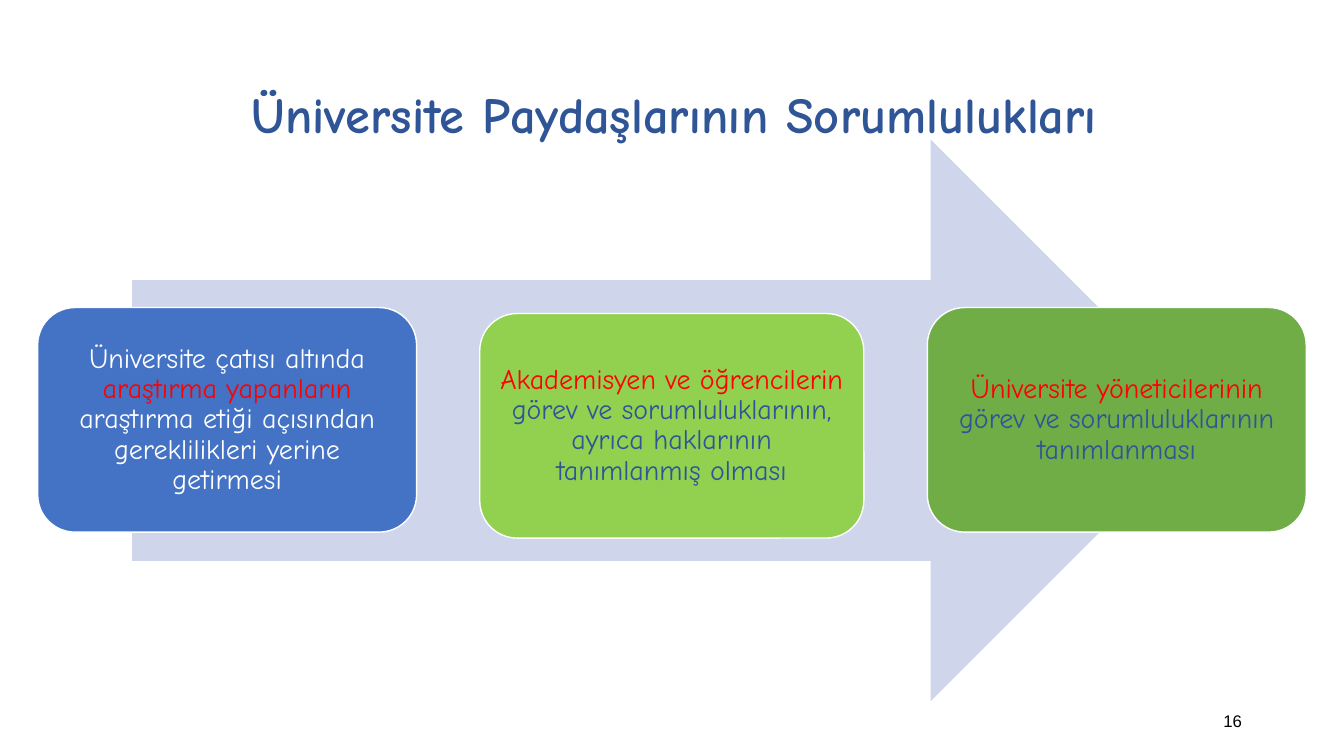
"""Build the slide on the responsibilities of university stakeholders."""
import pptx
import pptx.util
import pptx.dml.color
import pptx.enum.shapes
import pptx.enum.text

Cm = pptx.util.Cm
Pt = pptx.util.Pt
RGBColor = pptx.dml.color.RGBColor
MSO_SHAPE = pptx.enum.shapes.MSO_SHAPE
PP_ALIGN = pptx.enum.text.PP_ALIGN
MSO_ANCHOR = pptx.enum.text.MSO_ANCHOR

NAVY = RGBColor(0x2F, 0x55, 0x97)
RED = RGBColor(0xFF, 0x00, 0x00)
WHITE = RGBColor(0xFF, 0xFF, 0xFF)
BLACK = RGBColor(0x00, 0x00, 0x00)
PALE = RGBColor(0xCF, 0xD5, 0xEA)
BLUE = RGBColor(0x44, 0x72, 0xC4)
LIME = RGBColor(0x92, 0xD0, 0x50)
GREEN = RGBColor(0x70, 0xAD, 0x47)


def write(tf, runs, align=PP_ALIGN.CENTER, spacing=0.9):
    """Fill the frame with one paragraph of (text, font values) runs."""
    for name, value in {"word_wrap": True, "vertical_anchor": MSO_ANCHOR.MIDDLE,
                        "auto_size": pptx.enum.text.MSO_AUTO_SIZE.NONE}.items():
        setattr(tf, name, value)
    p = tf.paragraphs[0]
    p.alignment = align
    p.line_spacing = spacing
    for text, font, size, bold, color in runs:
        r = p.add_run()
        r.text = text
        for name, value in {"name": font, "size": Pt(size), "bold": bold}.items():
            setattr(r.font, name, value)
        r.font.color.rgb = color


def add_shape(kind, left, top, width, height, fill):
    """Add a flat filled shape without outline; lengths in centimetres."""
    sp = s.shapes.add_shape(kind, Cm(left), Cm(top), Cm(width), Cm(height))
    sp.shadow.inherit = False
    sp.fill.solid()
    sp.fill.fore_color.rgb = fill
    sp.line.fill.background()
    return sp


prs = pptx.Presentation()
prs.slide_width = Cm(33.87)
prs.slide_height = Cm(19.05)
s = prs.slides.add_slide(prs.slide_layouts[5])

title = s.shapes.title
for name, value in {"left": 2.34, "top": 1.02, "width": 29.21, "height": 3.68}.items():
    setattr(title, name, Cm(value))
write(title.text_frame, [
    (" ", "Comic Neue", 44, True, NAVY),
    ("Üniversite Paydaşlarının Sorumlulukları ", "Comic Neue", 36, True, NAVY),
])

number = s.shapes.add_textbox(Cm(23.93), Cm(17.65), Cm(7.62), Cm(1.02))
write(number.text_frame, [("16", "Arial", 12, False, BLACK)], PP_ALIGN.RIGHT, 1.0)

add_shape(MSO_SHAPE.RIGHT_ARROW, 3.33, 3.52, 27.2, 14.15, PALE)

boxes = [
    (0.95, 7.75, 9.55, BLUE, [("Üniversite çatısı altında ", WHITE),
                              ("araştırma yapanların ", RED),
                              ("araştırma etiği açısından gereklilikleri yerine getirmesi", WHITE)]),
    (12.09, 7.9, 9.68, LIME, [("Akademisyen ve öğrencilerin ", RED),
                              ("görev ve sorumluluklarının, ayrıca haklarının tanımlanmış olması", NAVY)]),
    (23.37, 7.75, 9.55, GREEN, [("Üniversite yöneticilerinin ", RED),
                                ("görev ve sorumluluklarının tanımlanması", NAVY)]),
]
for left, top, width, fill, parts in boxes:
    sp = add_shape(MSO_SHAPE.ROUNDED_RECTANGLE, left, top, width, 5.66, fill)
    sp.line.color.rgb = WHITE
    sp.line.width = Pt(1)
    tf = sp.text_frame
    for side in ("left", "top", "right", "bottom"):
        setattr(tf, f"margin_{side}", Cm(0.2))
    write(tf, [(text, "Comic Neue", 20, False, color) for text, color in parts])

prs.save("out.pptx")
